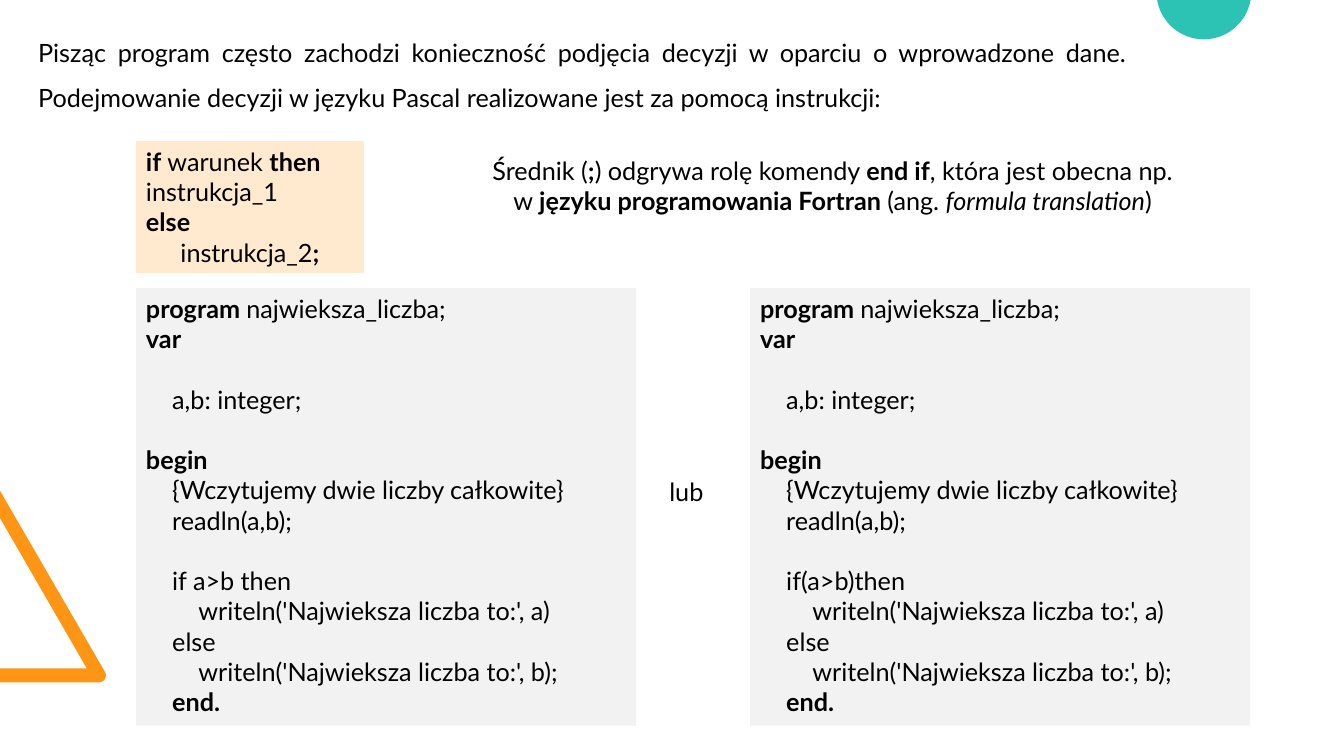
from dataclasses import dataclass
from math import asin, cos, degrees, radians, sin

from pptx import Presentation
from pptx.dml.color import RGBColor
from pptx.enum.shapes import MSO_SHAPE
from pptx.enum.text import MSO_ANCHOR, PP_ALIGN
from pptx.util import Inches, Pt

RECTANGLE = MSO_SHAPE.RECTANGLE
TOP = MSO_ANCHOR.TOP
LEFT, CENTER, JUSTIFY = PP_ALIGN.LEFT, PP_ALIGN.CENTER, PP_ALIGN.JUSTIFY

BLACK = RGBColor(0x00, 0x00, 0x00)
GREY = RGBColor(0xF2, 0xF2, 0xF2)
CREAM = RGBColor(0xFF, 0xEA, 0xD0)
ORANGE = RGBColor(0xFF, 0x95, 0x14)
TEAL = RGBColor(0x2C, 0xC3, 0xB4)

FONT = "Lato"
FONT_SIZE = 18
LINE_GAP = 21.6  # height of one line of text, in points
INDENT = 0.26
CODE_TOP, CODE_WIDTH, CODE_HEIGHT = 2.86, 4.96, 4.34

Point = tuple[float, float]


@dataclass(frozen=True)
class Run:
    text: str
    bold: bool = False
    italic: bool = False


@dataclass(frozen=True)
class Line:
    runs: tuple[Run, ...]
    indent: int = 0
    gap: bool = False
    align: PP_ALIGN = LEFT
    spacing: float = 1.0


@dataclass(frozen=True)
class Box:
    left: float
    top: float
    width: float
    height: float
    lines: list[Line]
    fill: RGBColor | None = None


def line(*parts: str | Run, **layout) -> Line:
    """Make a line from runs, where a plain string is a regular run."""
    runs = tuple(Run(part) if isinstance(part, str) else part for part in parts)
    return Line(runs, **layout)


def bold(text: str) -> Run:
    return Run(text, bold=True)


def code_lines(condition: str) -> list[Line]:
    return [
        line(bold("program "), "najwieksza_liczba;"),
        line(bold("var")),
        line("a,b: integer;", indent=1, gap=True),
        line(bold("begin"), gap=True),
        line("{Wczytujemy dwie liczby całkowite}", indent=1),
        line("readln(a,b);", indent=1),
        line(condition, indent=1, gap=True),
        line("writeln('Najwieksza liczba to:', a)", indent=2),
        line("else", indent=1),
        line("writeln('Najwieksza liczba to:', b);", indent=2),
        line(bold("end."), indent=1),
    ]


def add_text(p, text: str, *, bold: bool = False, italic: bool = False) -> None:
    for i, piece in enumerate(text.split("\n")):
        if i:
            p.add_line_break()
        r = p.add_run()
        r.text = piece
        r.font.name, r.font.size = FONT, Pt(FONT_SIZE)
        r.font.bold, r.font.italic = bold, italic
        r.font.color.rgb = BLACK


def add_box(s, box: Box) -> None:
    frame = [Inches(v) for v in (box.left, box.top, box.width, box.height)]
    if box.fill is None:
        sp = s.shapes.add_textbox(*frame)
    else:
        sp = s.shapes.add_shape(RECTANGLE, *frame)
        paint(sp, box.fill)
    tf = sp.text_frame
    tf.word_wrap = True
    tf.vertical_anchor = TOP
    for i, item in enumerate(box.lines):
        p = tf.add_paragraph() if i else tf.paragraphs[0]
        p.alignment, p.line_spacing = item.align, item.spacing
        if item.gap:
            p.space_before = Pt(LINE_GAP)
        if item.indent:
            p._p.get_or_add_pPr().set("marL", str(Inches(INDENT * item.indent)))
        for run in item.runs:
            add_text(p, run.text, bold=run.bold, italic=run.italic)


def paint(sp, color: RGBColor) -> None:
    sp.shadow.inherit = False
    sp.fill.solid()
    sp.fill.fore_color.rgb = color
    sp.line.fill.background()


def arc(center: Point, radius: float, start: float, end: float, steps: int) -> list[Point]:
    """Points along an arc; angles in degrees, clockwise from the right."""
    angles = [radians(start + (end - start) * i / steps) for i in range(steps + 1)]
    return [(center[0] + radius * cos(a), center[1] + radius * sin(a)) for a in angles]


def add_outline(s, points: list[Point], color: RGBColor) -> None:
    vertices = [(Inches(x), Inches(y)) for x, y in points]
    builder = s.shapes.build_freeform(*vertices[0])
    builder.add_line_segments(vertices[1:], close=True)
    paint(builder.convert_to_shape(), color)


def add_decorations(s) -> None:
    corner = arc((0.98, 6.7), 0.07, -30, 90, 12)
    add_outline(s, [(0, 6.77), (0, 6.63), (0.86, 6.63), (0, 5.14), (0, 4.87), *corner], ORANGE)
    radius, rise = 0.47, 0.08
    edge = degrees(asin(rise / radius))
    add_outline(s, arc((11.94, -rise), radius, edge, 180 - edge, 48), TEAL)


BOXES = [
    Box(1.35, CODE_TOP, CODE_WIDTH, CODE_HEIGHT, code_lines("if a>b then"), GREY),
    Box(7.44, CODE_TOP, CODE_WIDTH, CODE_HEIGHT, code_lines("if(a>b)then"), GREY),
    Box(0.28, 0.17, 10.99, 0.96, [
        line("Pisząc program często zachodzi konieczność podjęcia decyzji w oparciu "
             "o wprowadzone dane. Podejmowanie decyzji w języku Pascal realizowane "
             "jest za pomocą instrukcji:", align=JUSTIFY, spacing=1.5),
    ]),
    Box(1.35, 1.4, 2.26, 1.31, [
        line(bold("if"), " warunek ", bold("then")),
        line("instrukcja_1"),
        line(bold("else")),
        line("instrukcja_2", bold(";"), align=CENTER),
    ], CREAM),
    Box(4.18, 1.49, 8.22, 0.71, [
        line("Średnik (", bold(";"), ") odgrywa rolę komendy ", bold("end if"),
             ", która jest obecna np. \nw ", bold("języku programowania Fortran "),
             "(ang. ", Run("formula translation", italic=True), ") ", align=CENTER),
    ]),
    Box(6.54, 4.68, 0.77, 0.4, [line("lub")]),
]


def main() -> None:
    prs = Presentation()
    prs.slide_width, prs.slide_height = Inches(13.33), Inches(7.5)
    s = prs.slides.add_slide(prs.slide_layouts[6])
    add_decorations(s)
    for box in BOXES:
        add_box(s, box)
    prs.save("out.pptx")


if __name__ == "__main__":
    main()
